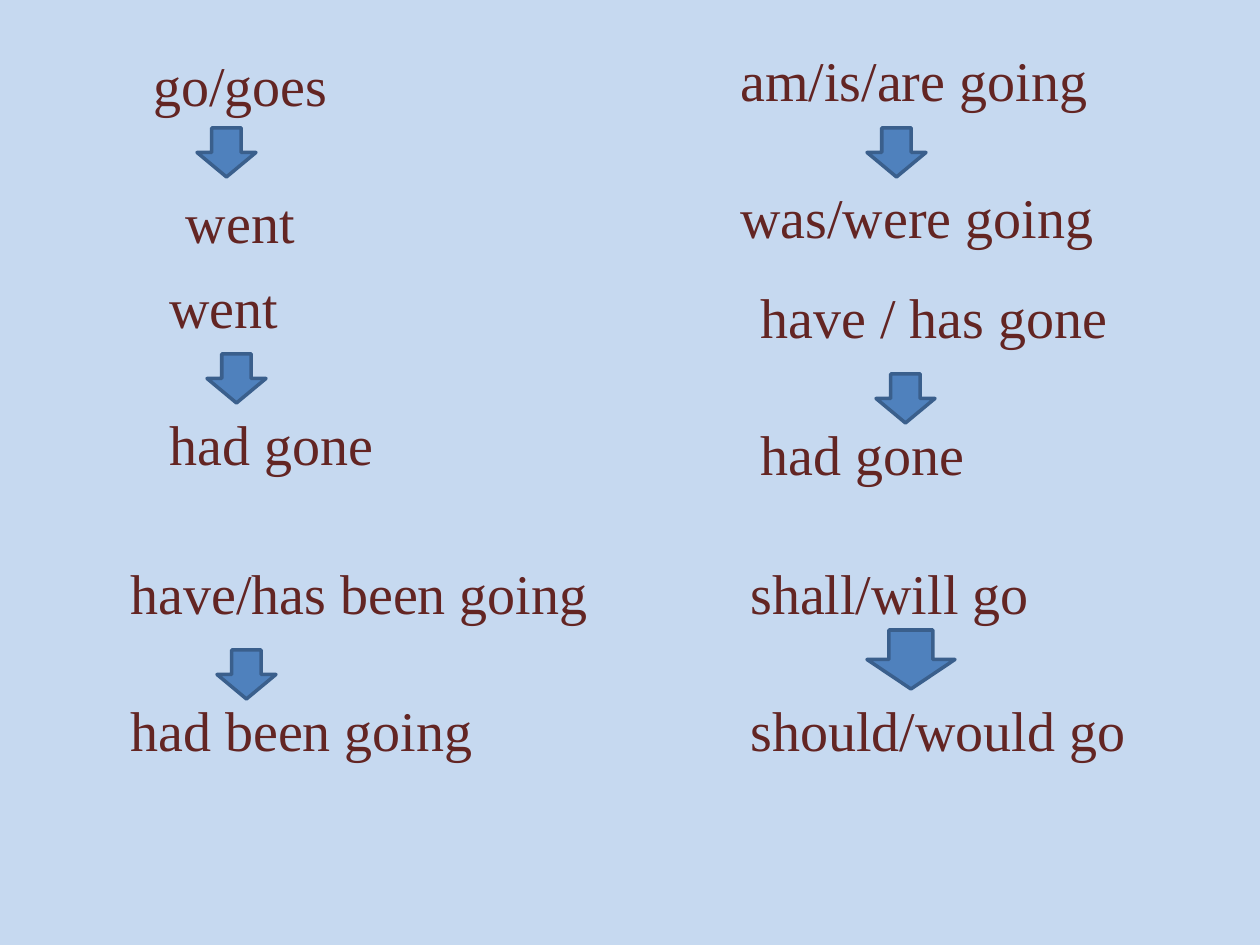
from pptx import Presentation
from pptx.dml.color import RGBColor
from pptx.enum.shapes import MSO_SHAPE as Shape
from pptx.enum.text import MSO_ANCHOR as Anchor, PP_ALIGN as Align
from pptx.util import Emu, Pt

SKY = RGBColor(0xC6, 0xD9, 0xF0)
MAROON = RGBColor(0x63, 0x25, 0x23)
BLUE = RGBColor(0x4F, 0x81, 0xBD)
NAVY = RGBColor(0x3A, 0x5F, 0x8C)

VERB_FORMAT = {"name": "Times New Roman", "size": Pt(32)}
TENSE_SHIFTS = [
    (("am/is/are going", "was/were going"), (728, 39, 433, 217), (867, 128, 59, 49)),
    (("went", "had gone"), (157, 266, 354, 217), (207, 354, 59, 49)),
    (("have / has gone", "had gone"), (748, 276, 473, 217), (876, 374, 59, 49)),
    (("have/has been going", "had been going"), (118, 552, 493, 217), (217, 650, 59, 49)),
    (("shall/will go", "should/would go"), (738, 552, 452, 217), (867, 630, 88, 59)),
]


def px(length):
    return Emu(round(length * 914400 / 126))


class TenseSlide:
    """Holds the style and the current slide, and draws verb pairs and arrows."""

    def __init__(self, deck):
        self.slide = deck.slides.add_slide(deck.slide_layouts[6])
        backdrop = self.slide.background.fill
        backdrop.solid()
        backdrop.fore_color.rgb = SKY

    def verbs(self, forms, box, align=Align.LEFT, anchor=Anchor.TOP):
        frame = self.slide.shapes.add_textbox(*map(px, box)).text_frame
        frame.word_wrap = True
        frame.vertical_anchor = anchor
        for index, form in enumerate(forms):
            line = frame.add_paragraph() if index else frame.paragraphs[0]
            line.alignment = align
            line.space_before = Pt(40 if index else 0)
            verb = line.add_run()
            verb.text = form
            for key, value in VERB_FORMAT.items():
                setattr(verb.font, key, value)
            verb.font.color.rgb = MAROON

    def arrow(self, box):
        arrow = self.slide.shapes.add_shape(Shape.DOWN_ARROW, *map(px, box))
        arrow.shadow.inherit = False
        arrow.fill.solid()
        arrow.fill.fore_color.rgb = BLUE
        arrow.line.color.rgb = NAVY
        arrow.line.width = Pt(2)


def main():
    deck = Presentation()
    deck.slide_width, deck.slide_height = px(1260), px(945)
    tenses = TenseSlide(deck)
    tenses.verbs(("go/goes", "went"), (39, 0, 403, 305), Align.CENTER, Anchor.MIDDLE)
    tenses.arrow((197, 128, 59, 49))
    for forms, text_box, arrow_box in TENSE_SHIFTS:
        tenses.verbs(forms, text_box)
        tenses.arrow(arrow_box)
    deck.save("out.pptx")


if __name__ == "__main__":
    main()
